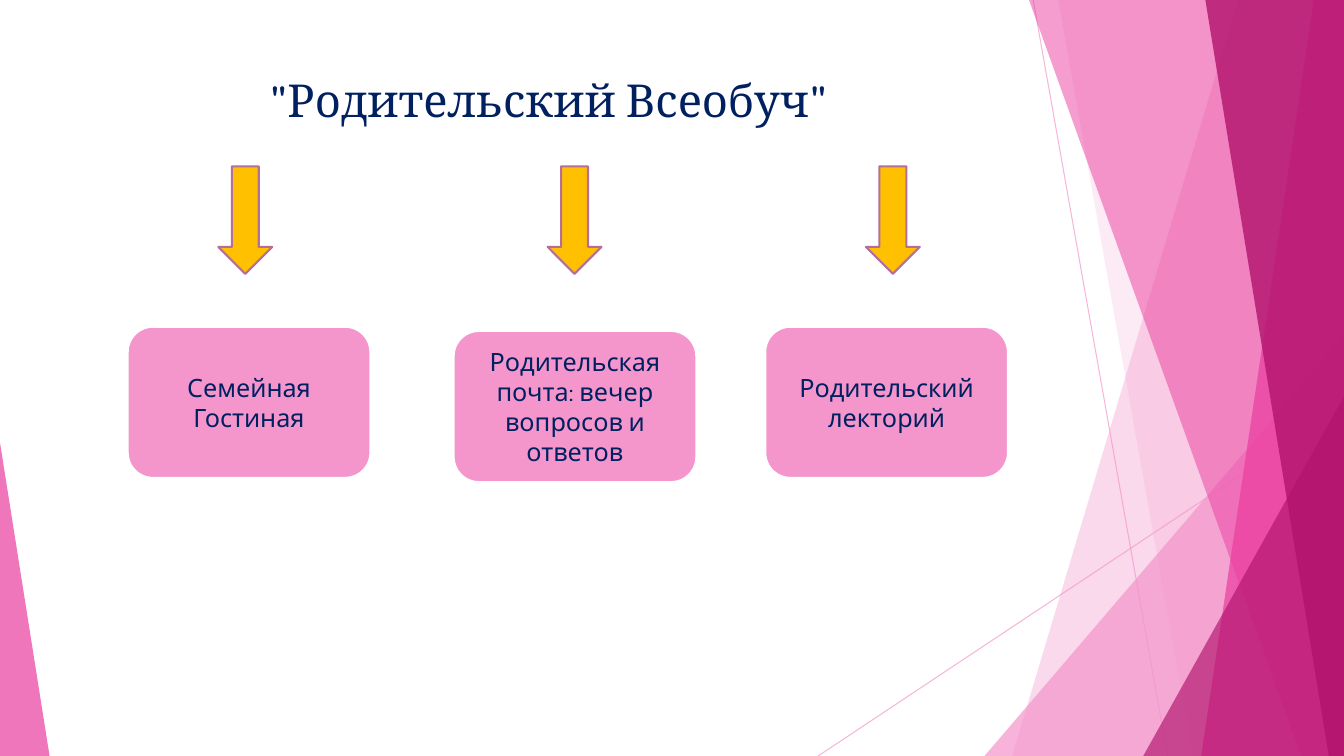
"""Build the parent education slide with its pink facet border."""
import dataclasses
import typing

import lxml.etree
import pptx
import pptx.dml.color
import pptx.enum.shapes
import pptx.enum.text
import pptx.oxml.ns
import pptx.util

RGB = pptx.dml.color.RGBColor
KIND = pptx.enum.shapes.MSO_SHAPE
PINK = RGB(0xF4, 0x96, 0xCB)
ROSE = RGB(0xEB, 0x3D, 0x9F)
WINE = RGB(0xB2, 0x13, 0x6D)
MAUVE = RGB(0xB5, 0x6F, 0x96)
GOLD = RGB(0xFF, 0xC0, 0x00)
NAVY = RGB(0x00, 0x20, 0x60)
WHITE = RGB(0xFF, 0xFF, 0xFF)
COLS, ROWS = 16, 9
WIDE, HIGH = pptx.util.Inches(13.333), pptx.util.Inches(7.5)


@dataclasses.dataclass
class Ray:
    x1: float
    y1: float
    x2: float
    y2: float


@dataclasses.dataclass
class Band:
    top: float
    foot: float
    color: RGB
    alpha: int


@dataclasses.dataclass
class Wedge:
    x: float
    y: float
    width: float
    tip: float
    color: RGB
    alpha: int


@dataclasses.dataclass
class Topic:
    arrow: float
    x: float
    y: float
    text: str


RAYS = [Ray(12.3, 0, 13.9, 9), Ray(16, 4.84, 9.74, 9)]
FACETS = [
    Band(14.74, 12.05, PINK, 36),
    Band(12.6, 14.2, PINK, 20),
    Wedge(11.72, 4, 4.28, 1, PINK, 72),
    Band(12.25, 15.49, ROSE, 50),
    Band(15.64, 14.3, ROSE, 70),
    Band(14.35, 15.82, WINE, 80),
    Wedge(13.61, 4.72, 2.39, 1, WINE, 66),
    Wedge(0, 5.27, 0.59, 0, ROSE, 70),
]
TOPICS = [
    Topic(2.6, 1.52, 3.89, "Семейная Гостиная"),
    Topic(6.52, 5.4, 3.94, "Родительская почта: вечер вопросов и ответов"),
    Topic(10.31, 9.11, 3.89, "Родительский лекторий"),
]


def col(n: float) -> int:
    """Turn grid columns into a length."""
    return round(WIDE * n / COLS)


def row(n: float) -> int:
    """Turn grid rows into a length."""
    return round(HIGH * n / ROWS)


def fade(part: typing.Any, alpha: int) -> None:
    """Set the opacity of a solid colour, in percent."""
    tint = next(part.iter(pptx.oxml.ns.qn("a:srgbClr")))
    node = lxml.etree.SubElement(tint, pptx.oxml.ns.qn("a:alpha"))
    node.set("val", str(alpha * 1000))


def paint(shape: typing.Any, color: RGB, edge: typing.Optional[RGB] = None) -> None:
    """Fill a shape flat and outline it if an edge colour is given."""
    shape.shadow.inherit = False
    shape.fill.solid()
    shape.fill.fore_color.rgb = color
    if edge is None:
        shape.line.fill.background()
    else:
        shape.line.color.rgb = edge
        shape.line.width = pptx.util.Pt(1.5)


def write(frame: typing.Any, text: str, font: str, size: float) -> None:
    """Put centred navy text in a frame."""
    frame.text = text
    frame.word_wrap = True
    line = frame.paragraphs[0]
    line.alignment = pptx.enum.text.PP_ALIGN.CENTER
    style = line.runs[0].font
    style.name, style.size = font, pptx.util.Pt(size)
    style.color.rgb = NAVY


def place(shapes: typing.Any, kind: KIND, x: float, y: float, w: float, h: float) -> typing.Any:
    """Add a preset shape by grid cell."""
    return shapes.add_shape(kind, col(x), row(y), col(w), row(h))


def draw_ray(shapes: typing.Any, ray: Ray) -> None:
    """Draw a thin line."""
    line = shapes.add_connector(
        pptx.enum.shapes.MSO_CONNECTOR.STRAIGHT,
        col(ray.x1), row(ray.y1), col(ray.x2), row(ray.y2))
    line.line.color.rgb = PINK
    line.line.width = pptx.util.Pt(0.75)
    props = line._element.spPr
    fade(props, 70)
    lxml.etree.SubElement(props, pptx.oxml.ns.qn("a:effectLst"))


def draw_facet(shapes: typing.Any, facet: typing.Union[Band, Wedge]) -> None:
    """Draw a clear band or wedge."""
    if isinstance(facet, Band):
        pen = shapes.build_freeform(col(facet.top), 0)
        pen.add_line_segments([(WIDE, 0), (WIDE, HIGH), (col(facet.foot), HIGH)])
        shape = pen.convert_to_shape()
    else:
        shape = place(shapes, KIND.ISOSCELES_TRIANGLE, facet.x, facet.y,
                      facet.width, ROWS - facet.y)
        shape.adjustments[0] = facet.tip
    paint(shape, facet.color)
    fade(shape._element.spPr, facet.alpha)


def draw_topic(shapes: typing.Any, topic: Topic) -> None:
    """Draw an arrow and the box below it."""
    arrow = place(shapes, KIND.DOWN_ARROW, topic.arrow, 1.98, 0.64, 1.28)
    paint(arrow, GOLD, MAUVE)
    box = place(shapes, KIND.ROUNDED_RECTANGLE, topic.x, topic.y, 2.89, 1.8)
    paint(box, PINK, WHITE)
    write(box.text_frame, topic.text, "Cabin", 18)
    box.text_frame.vertical_anchor = pptx.enum.text.MSO_ANCHOR.MIDDLE


def main() -> None:
    """Build and save the slide."""
    deck = pptx.Presentation()
    deck.slide_width, deck.slide_height = WIDE, HIGH
    shapes = deck.slides.add_slide(deck.slide_layouts[5]).shapes
    for ray in RAYS:
        draw_ray(shapes, ray)
    for facet in FACETS:
        draw_facet(shapes, facet)
    title = shapes.title
    title.left, title.top = col(0.89), row(0.8)
    title.width, title.height = col(11.28), row(0.92)
    write(title.text_frame, "\"Родительский Всеобуч\"", "Cambria", 32.4)
    title.text_frame.auto_size = pptx.enum.text.MSO_AUTO_SIZE.NONE
    title.text_frame.vertical_anchor = pptx.enum.text.MSO_ANCHOR.TOP
    for topic in TOPICS:
        draw_topic(shapes, topic)
    deck.save("out.pptx")


if __name__ == "__main__":
    main()
